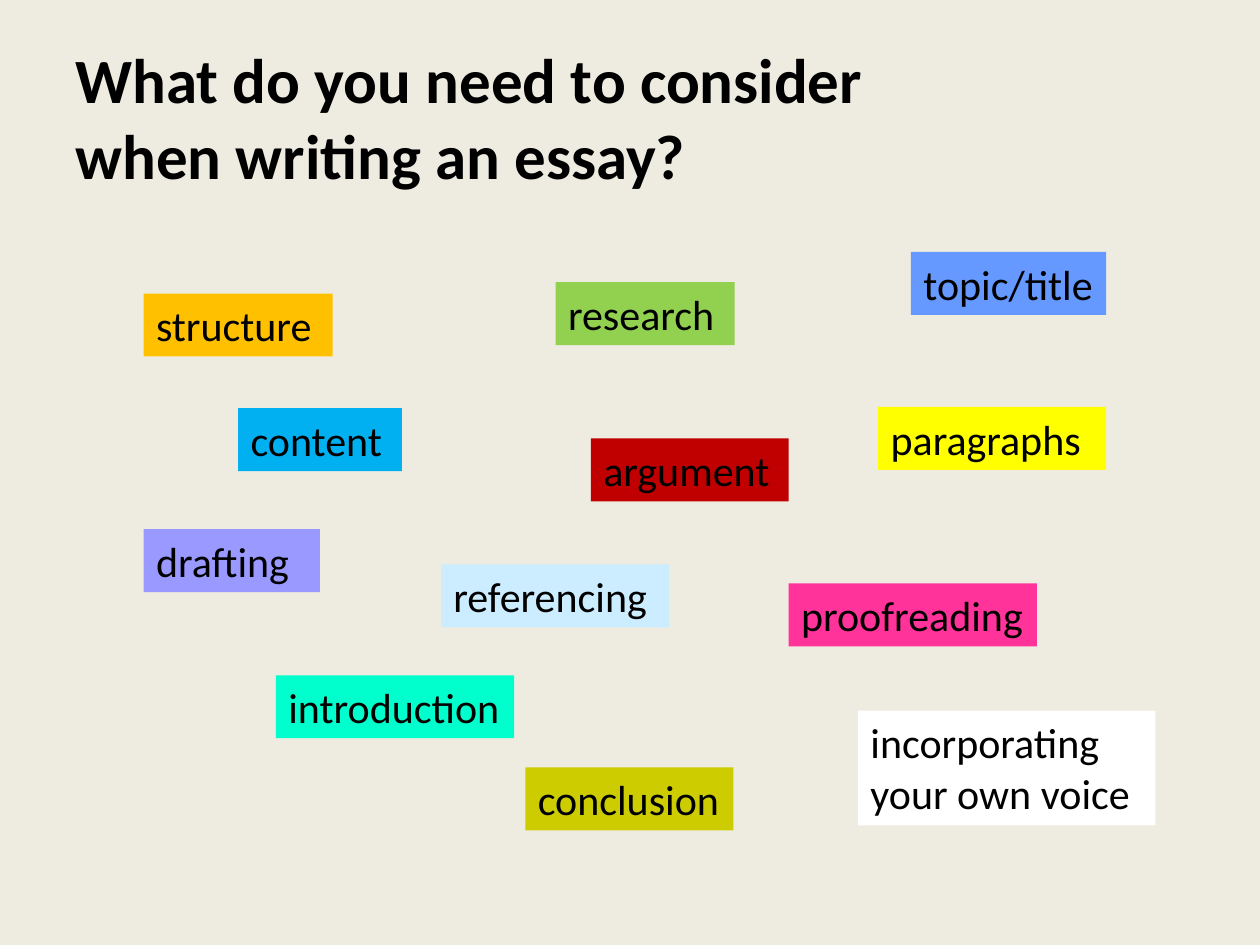
import pptx
import pptx.dml.color
import pptx.enum.shapes
import pptx.enum.text
import pptx.util

Inches = pptx.util.Inches

# word, left, top, width, height, fill
CONSIDERATIONS = [
    ("structure", 1.14, 2.33, 1.5, 0.5, "FFC000"),
    ("argument", 4.69, 3.48, 1.57, 0.5, "C00000"),
    ("paragraphs", 6.97, 3.23, 1.81, 0.5, "FFFF00"),
    ("research", 4.41, 2.24, 1.42, 0.5, "92D050"),
    ("content", 1.89, 3.24, 1.3, 0.5, "00B0F0"),
    ("proofreading", 6.26, 4.63, 1.97, 0.5, "FF3399"),
    ("drafting", 1.14, 4.2, 1.4, 0.5, "9999FF"),
    ("referencing", 3.5, 4.48, 1.81, 0.5, "CCECFF"),
    ("introduction", 2.19, 5.36, 1.89, 0.5, "00FFCC"),
    ("incorporating your own voice", 6.81, 5.64, 2.36, 0.91, "FFFFFF"),
    ("conclusion", 4.17, 6.09, 1.65, 0.5, "CCCC00"),
    ("topic/title", 7.23, 2, 1.55, 0.5, "6699FF"),
]


def paint(fill, color):
    fill.solid()
    fill.fore_color.rgb = pptx.dml.color.RGBColor.from_string(color)


def write(frame, text, size, anchor, bold=False):
    frame.word_wrap = True
    frame.vertical_anchor = anchor
    paragraph = frame.paragraphs[0]
    paragraph.text = text
    paragraph.alignment = pptx.enum.text.PP_ALIGN.LEFT
    paragraph.font.name = "Calibri"
    paragraph.font.size = pptx.util.Pt(size)
    paragraph.font.bold = bold
    paint(paragraph.font.fill, "000000")


def add_title(slide, left, top, width, height):
    title = slide.shapes.add_textbox(left, top, width, height)
    write(title.text_frame, "What do you need to consider when writing an essay?",
          36, pptx.enum.text.MSO_ANCHOR.MIDDLE, bold=True)


def add_label(slide, word, color, left, top, width, height):
    label = slide.shapes.add_shape(
        pptx.enum.shapes.MSO_SHAPE.RECTANGLE, left, top, width, height)
    label.shadow.inherit = False
    label.line.fill.background()
    paint(label.fill, color)
    write(label.text_frame, word, 24, pptx.enum.text.MSO_ANCHOR.TOP)
    label.text_frame.auto_size = pptx.enum.text.MSO_AUTO_SIZE.SHAPE_TO_FIT_TEXT


def main():
    deck = pptx.Presentation()
    deck.slide_width, deck.slide_height = Inches(10), Inches(7.5)
    slide = deck.slides.add_slide(deck.slide_layouts[6])
    paint(slide.background.fill, "EEECE1")
    add_title(slide, Inches(0.5), Inches(0.3), Inches(7.02), Inches(1.25))
    for word, *box, color in CONSIDERATIONS:
        add_label(slide, word, color, *map(Inches, box))
    deck.save("out.pptx")


if __name__ == "__main__":
    main()
